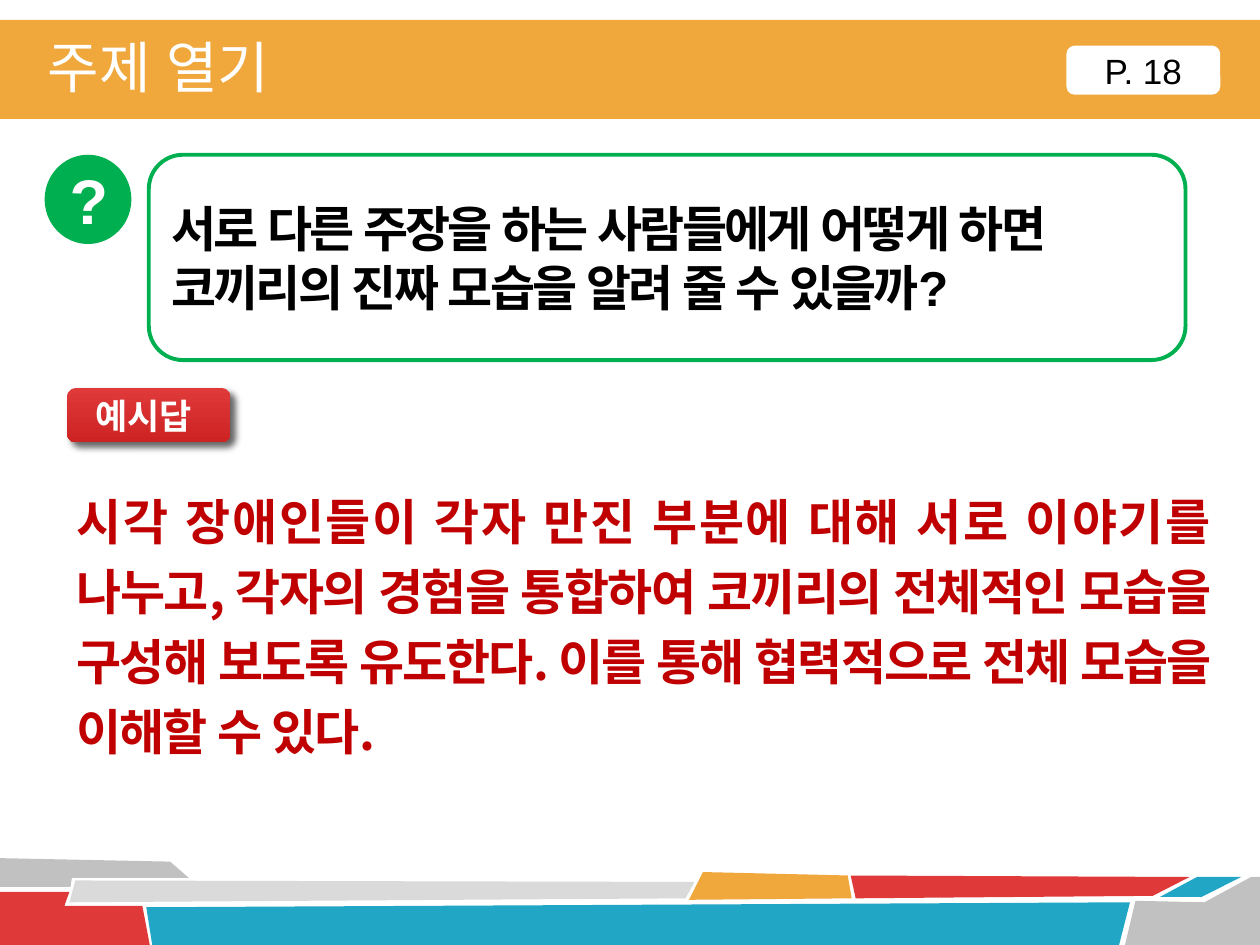
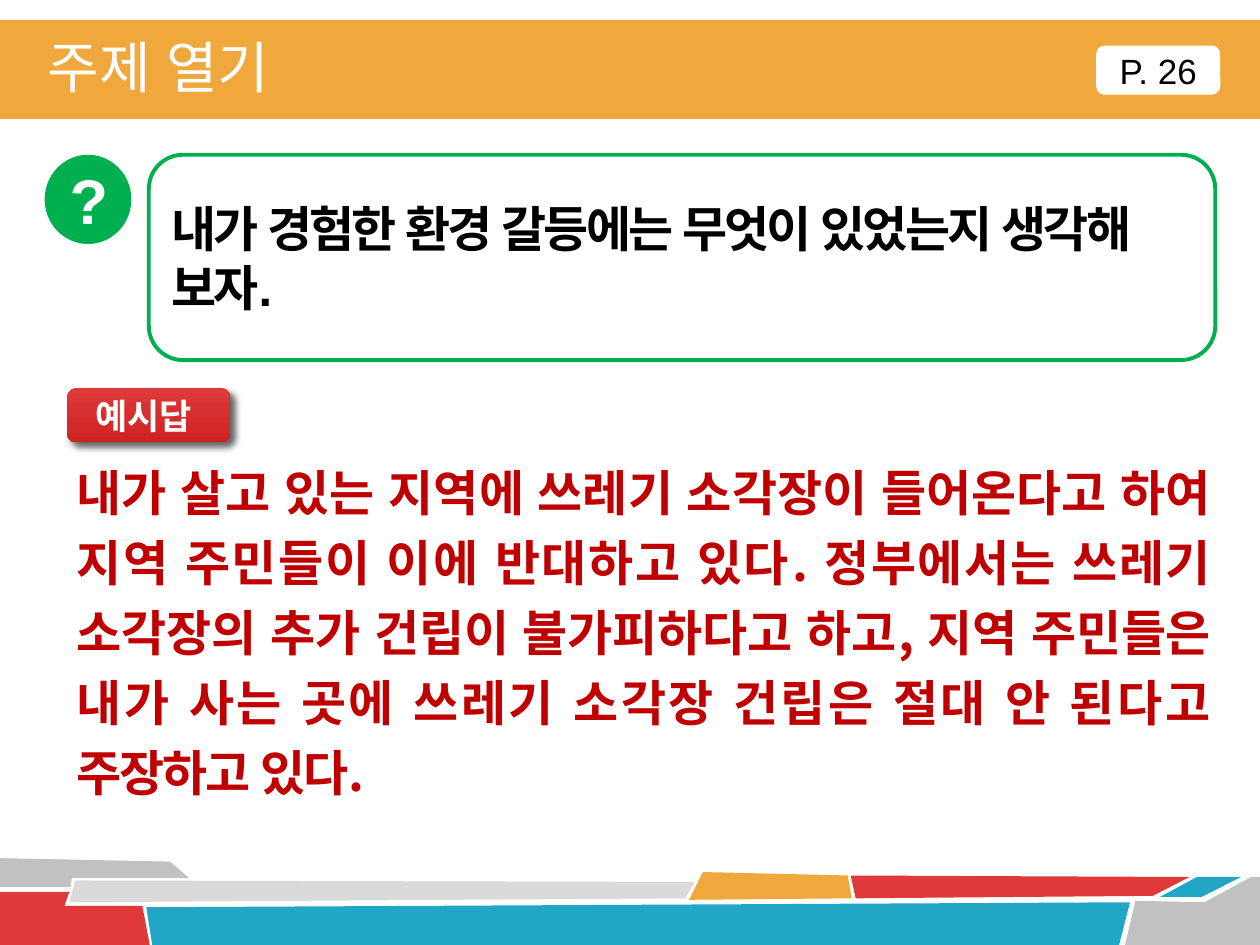
from lxml import etree
from pptx import Presentation
from pptx import util as u
from pptx.dml.color import RGBColor
from pptx.enum import shapes, text
from pptx.oxml import ns

Cm, Pt = u.Cm, u.Pt
Kind, Align, Anchor = shapes.MSO_SHAPE, text.PP_ALIGN, text.MSO_ANCHOR

# Shared look
LATIN, KOREAN = "Arial", "Noto Sans CJK KR"
WHITE, BLACK = "FFFFFF", "000000"
GOLD, GREEN, BLUE = "F0A73C", "00B050", "21A6C5"
RED, DEEP, INK = "DF3939", "CD2323", "C00000"
GREY, PALE = "C1C1C1", "DADADA"
WIDE, TALL = 25.4, 19.05
EDGE = 24.6  # right edge of the page badge

# Footer mosaic: colour and corner points in cm
TILES = [
    (GREY, [(0, 17.3), (3.43, 17.37), (3.81, 17.7), (1.45, 17.7),
            (1.42, 17.88), (0, 17.88)]),
    (RED, [(0, 17.98), (1.4, 17.98), (1.3, 18.26), (2.87, 18.26),
           (3.02, TALL), (0, TALL)]),
    (PALE, [(1.52, 17.75), (14, 17.78), (13.82, 18.11), (1.4, 18.19)]),
    (BLUE, [(2.95, 18.29), (22.78, 18.19), (22.56, TALL), (3.07, TALL)]),
    (GOLD, [(14.17, 17.58), (17.09, 17.65), (17.17, 18.11), (13.89, 18.14)]),
    (RED, [(17.15, 17.65), (23.98, 17.68), (23.24, 18.06), (17.25, 18.11)]),
    (BLUE, [(24.13, 17.68), (25.02, 17.68), (24.23, 18.08), (23.39, 18.08)]),
    (GREY, [(22.89, 18.16), (24.28, 18.19), (25.22, 17.68), (WIDE, 17.68),
            (WIDE, TALL), (22.68, TALL)]),
]

# What differs from slide to slide
PAGES = [
    dict(page="P. 18", badge=3.1, width=20.9, top=9.55, height=5.82,
         ask="서로 다른 주장을 하는 사람들에게 어떻게 하면\n"
             "코끼리의 진짜 모습을 알려 줄 수 있을까?",
         reply="시각 장애인들이 각자 만진 부분에 대해 서로 이야기를 나누고, "
               "각자의 경험을 통합하여 코끼리의 전체적인 모습을 구성해 보도록 "
               "유도한다. 이를 통해 협력적으로 전체 모습을 이해할 수 있다."),
    dict(page="P. 26", badge=2.5, width=21.5, top=8.97, height=7.24,
         ask="내가 경험한 환경 갈등에는 무엇이 있었는지 생각해 보자.",
         reply="내가 살고 있는 지역에 쓰레기 소각장이 들어온다고 하여 "
               "지역 주민들이 이에 반대하고 있다. 정부에서는 쓰레기 소각장의 "
               "추가 건립이 불가피하다고 하고, 지역 주민들은 내가 사는 곳에 "
               "쓰레기 소각장 건립은 절대 안 된다고 주장하고 있다."),
]


def hue(code):
    return RGBColor.from_string(code)


def paint(shape, fill, line=None):
    shape.shadow.inherit = False
    shape.fill.solid()
    shape.fill.fore_color.rgb = hue(fill)
    if line:
        shape.line.color.rgb = hue(line)
        shape.line.width = Pt(2.25)
    else:
        shape.line.fill.background()


def write(shape, words, size=20, color=BLACK, bold=False, font=LATIN,
          align=Align.LEFT, anchor=Anchor.MIDDLE, wrap=True, track=0,
          pitch=None):
    frame = shape.text_frame
    frame.word_wrap = wrap
    frame.vertical_anchor = anchor
    for i, line in enumerate(words.split("\n")):
        para = frame.add_paragraph() if i else frame.paragraphs[0]
        para.alignment = align
        if pitch:
            para.line_spacing = Pt(pitch)
        run = para.add_run()
        run.text = line
        run.font.size = Pt(size)
        run.font.bold = bold
        run.font.name = font
        run.font.color.rgb = hue(color)
        props = run._r.get_or_add_rPr()
        props.set("lang", "ko-KR")
        if track:
            props.set("spc", str(round(track * 100)))
        etree.SubElement(props, ns.qn("a:ea"), typeface=KOREAN)


def block(slide, kind, box, fill, line=None):
    shape = slide.shapes.add_shape(kind, *map(Cm, box))
    paint(shape, fill, line)
    return shape


def label(slide, box, words, **style):
    shape = slide.shapes.add_textbox(*map(Cm, box))
    write(shape, words, font=KOREAN, anchor=Anchor.TOP, **style)


def tile(slide, color, points):
    first, *rest = [(Cm(x), Cm(y)) for x, y in points]
    path = slide.shapes.build_freeform(*first)
    path.add_line_segments(rest, close=True)
    paint(path.convert_to_shape(), color)


def shade(shape, top, base):
    """Vertical gradient with a soft shadow to the lower right."""
    shape.fill.gradient()
    shape.fill.gradient_angle = 270
    for stop, color, place in zip(shape.fill.gradient_stops, (top, base), (0, 1)):
        stop.color.rgb = hue(color)
        stop.position = place
    effects = shape._element.spPr.find(ns.qn("a:effectLst"))
    cast = etree.SubElement(effects, ns.qn("a:outerShdw"), blurRad=str(Pt(4)),
                            dist=str(Pt(4)), dir=str(45 * 60000),
                            algn="tl", rotWithShape="0")
    tone = etree.SubElement(cast, ns.qn("a:srgbClr"), val=BLACK)
    etree.SubElement(tone, ns.qn("a:alpha"), val="60000")


def frame(slide, page, badge):
    """Footer mosaic, title band and page badge."""
    for color, points in TILES:
        tile(slide, color, points)
    block(slide, Kind.RECTANGLE, (0, 0.4, WIDE, 2), GOLD)
    tab = block(slide, Kind.ROUNDED_RECTANGLE,
                (EDGE - badge, 0.92, badge, 0.99), WHITE)
    write(tab, page, align=Align.CENTER)
    label(slide, (0.71, 0.53, 5.46, 1.63), "주제 열기", size=32, color=WHITE,
          wrap=False)


def query(slide, ask, width):
    mark = block(slide, Kind.OVAL, (0.9, 3.12, 1.75, 1.8), GREEN)
    write(mark, "?", size=36, color=WHITE, bold=True, align=Align.CENTER)
    box = block(slide, Kind.ROUNDED_RECTANGLE, (3, 3.12, width, 4.14),
                WHITE, GREEN)
    write(box, ask, size=28, bold=True, track=-1.5)


def answer(slide, reply, top, height):
    tag = block(slide, Kind.ROUNDED_RECTANGLE, (1.35, 7.82, 3.3, 1.1), RED)
    shade(tag, RED, DEEP)
    write(tag, "예시답 ", color=WHITE, bold=True, font=KOREAN,
          align=Align.CENTER)
    label(slide, (1.3, top, 23.32, height), reply, size=28, color=INK,
          bold=True, align=Align.JUSTIFY, track=-1.2, pitch=40)


def main():
    deck = Presentation()
    deck.slide_width, deck.slide_height = Cm(WIDE), Cm(TALL)
    for item in PAGES:
        slide = deck.slides.add_slide(deck.slide_layouts[6])
        frame(slide, item["page"], item["badge"])
        query(slide, item["ask"], item["width"])
        answer(slide, item["reply"], item["top"], item["height"])
    deck.save("out.pptx")


if __name__ == "__main__":
    main()
